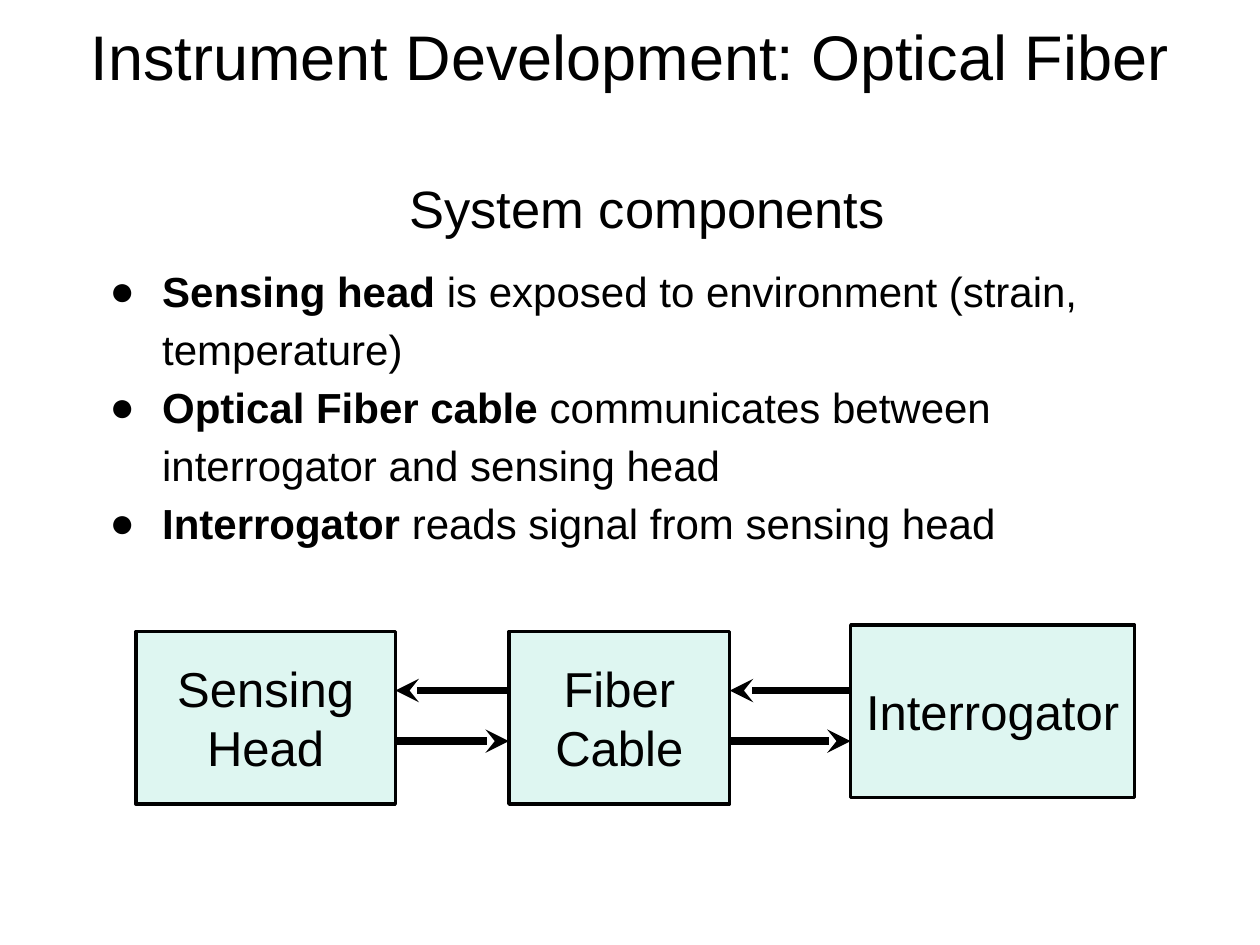
from lxml import etree
from pptx import Presentation
from pptx import util as u
from pptx.dml.color import RGBColor
from pptx.enum import shapes, text
from pptx.oxml import ns


def color(value):
    return RGBColor.from_string(value)


def add_xml(parent, tag, **attributes):
    return etree.SubElement(parent, ns.qn(tag), attributes)


def write(paragraph, content, size=24, bold=False, font="Arial", fill="000000"):
    run = paragraph.add_run()
    run.text = content
    run.font.name = font
    run.font.size = u.Pt(size)
    run.font.bold = bold
    run.font.color.rgb = color(fill)


class SlideBuilder:
    ink = "000000"
    box_fill = "DEF6F1"

    def __init__(self, slide):
        self.slide = slide

    def place(self, shape, left, top, width, height):
        shape.left, shape.top = u.Cm(left), u.Cm(top)
        shape.width, shape.height = u.Cm(width), u.Cm(height)

    def frame(self, shape, anchor, horizontal=0.25, vertical=0.13):
        frame = shape.text_frame
        frame.word_wrap = True
        frame.auto_size = text.MSO_AUTO_SIZE.NONE
        frame.vertical_anchor = anchor
        frame.margin_left = frame.margin_right = u.Cm(horizontal)
        frame.margin_top = frame.margin_bottom = u.Cm(vertical)
        return frame

    def title(self, content, *bounds):
        shape = self.slide.shapes.title
        self.place(shape, *bounds)
        paragraph = self.frame(shape, text.MSO_ANCHOR.MIDDLE).paragraphs[0]
        paragraph.alignment = text.PP_ALIGN.CENTER
        write(paragraph, content, size=36)

    def bullet(self, paragraph):
        properties = paragraph._p.get_or_add_pPr()
        properties.set("marL", str(u.Cm(1.27)))
        properties.set("indent", str(u.Cm(-1.06)))
        bullet_color = add_xml(properties, "a:buClr")
        add_xml(bullet_color, "a:srgbClr", val=self.ink)
        add_xml(properties, "a:buFont", typeface="Arial")
        add_xml(properties, "a:buChar", char="●")

    def body(self, heading, items, *bounds):
        shape = self.slide.shapes.add_textbox(*map(u.Cm, bounds))
        frame = self.frame(shape, text.MSO_ANCHOR.TOP)
        paragraph = frame.paragraphs[0]
        paragraph.alignment = text.PP_ALIGN.CENTER
        paragraph.line_spacing = 1.5
        write(paragraph, heading, size=30)
        for index, (term, description) in enumerate(items):
            paragraph = frame.add_paragraph()
            self.bullet(paragraph)
            paragraph.line_spacing = 1.15
            paragraph.space_before = u.Pt(0 if index else 10.8)
            write(paragraph, term, bold=True)
            write(paragraph, description)

    def box(self, content, *bounds):
        shape = self.slide.shapes.add_shape(
            shapes.MSO_SHAPE.RECTANGLE, *map(u.Cm, bounds))
        shape.shadow.inherit = False
        shape.fill.solid()
        shape.fill.fore_color.rgb = color(self.box_fill)
        shape.line.color.rgb = color(self.ink)
        shape.line.width = u.Pt(2)
        frame = self.frame(shape, text.MSO_ANCHOR.MIDDLE, 0.18, 0.1)
        paragraph = frame.paragraphs[0]
        paragraph.alignment = text.PP_ALIGN.CENTER
        write(paragraph, content, size=28)

    def arrow(self, start, end, y):
        connector = self.slide.shapes.add_connector(
            shapes.MSO_CONNECTOR.STRAIGHT, *map(u.Cm, (start, y, end, y)))
        connector.line.color.rgb = color(self.ink)
        connector.line.width = u.Pt(4.5)
        add_xml(connector.line._get_or_add_ln(), "a:tailEnd", type="stealth")
        add_xml(connector._element.spPr, "a:effectLst")


def main():
    presentation = Presentation()
    presentation.slide_width = u.Cm(25.4)
    presentation.slide_height = u.Cm(19.05)
    slide = presentation.slides.add_slide(presentation.slide_layouts[5])
    builder = SlideBuilder(slide)

    builder.title("Instrument Development: Optical Fiber", 0, 0, 25.4, 2.21)
    components = [
        ("Sensing head ", "is exposed to environment (strain, temperature)"),
        ("Optical Fiber cable ",
         "communicates between interrogator and sensing head"),
        ("Interrogator", " reads signal from sensing head"),
    ]
    builder.body("System components", components, 1.75, 2.79, 22.6, 9.07)

    boxes = [
        ("Sensing Head", 2.74, 12.73, 5.23),
        ("Fiber Cable", 10.26, 12.73, 4.45),
        ("Interrogator", 17.15, 12.6, 5.72),
    ]
    for label, left, top, width in boxes:
        builder.box(label, left, top, width, 3.48)

    for (_, left, _, width), (_, following, _, _) in zip(boxes, boxes[1:]):
        builder.arrow(following, left + width, 13.92)
        builder.arrow(left + width, following, 14.94)

    presentation.save("out.pptx")


if __name__ == "__main__":
    main()
